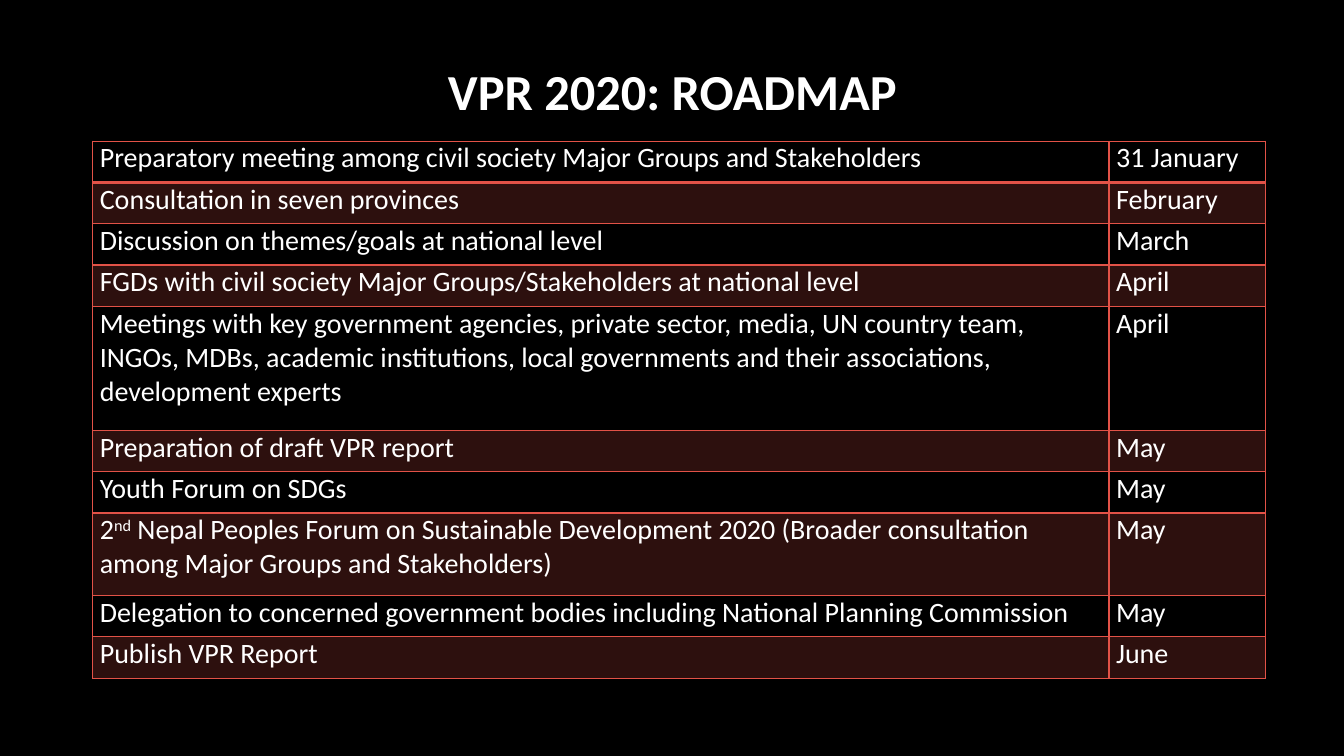
from lxml import etree
from pptx import Presentation
from pptx.dml.color import RGBColor
from pptx.enum.text import MSO_ANCHOR, PP_ALIGN
from pptx.oxml.ns import qn
from pptx.util import Inches, Pt

# Content: activity, date; a list marks an activity whose second part is superscript
TITLE = "VPR 2020: ROADMAP"
ROADMAP = [
    ("Preparatory meeting among civil society Major Groups and Stakeholders", "31 January"),
    ("Consultation in seven provinces", "February"),
    ("Discussion on themes/goals at national level", "March"),
    ("FGDs with civil society Major Groups/Stakeholders at national level", "April"),
    ("Meetings with key government agencies, private sector, media, UN country team, "
     "INGOs, MDBs, academic institutions, local governments and their associations, "
     "development experts", "April"),
    ("Preparation of draft VPR report", "May"),
    ("Youth Forum on SDGs", "May"),
    (["2", "nd", " Nepal Peoples Forum on Sustainable Development 2020 "
      "(Broader consultation among Major Groups and Stakeholders)"], "May"),
    ("Delegation to concerned government bodies including National Planning Commission", "May"),
    ("Publish VPR Report", "June"),
]
COL_WIDTHS = [10.08, 1.55]
LINE_HEIGHT = 0.41
ROW_LINES = [1, 1, 1, 1, 3, 1, 1, 2, 1, 1]

FONT = "Calibri"
BLACK = RGBColor(0x00, 0x00, 0x00)
WHITE = RGBColor(0xFF, 0xFF, 0xFF)
RED = RGBColor(0xE2, 0x52, 0x47)
BAND_ALPHA = "20000"


def set_font(p, size, bold=False):
    p.font.name = FONT
    p.font.size = Pt(size)
    p.font.bold = bold
    p.font.color.rgb = WHITE


def add_border(cell, side, width):
    ln = etree.SubElement(cell._tc.get_or_add_tcPr(), qn("a:ln" + side), w=str(Pt(width)))
    fill = etree.SubElement(ln, qn("a:solidFill"))
    etree.SubElement(fill, qn("a:srgbClr"), val=str(RED))


def fill_cell(cell, banded):
    if not banded:
        cell.fill.background()
        return
    cell.fill.solid()
    cell.fill.fore_color.rgb = RED
    color = cell._tc.tcPr.find(qn("a:solidFill")).find(qn("a:srgbClr"))
    etree.SubElement(color, qn("a:alpha"), val=BAND_ALPHA)


def write_cell(cell, content):
    cell.margin_left = cell.margin_right = Inches(0.07)
    cell.margin_top = cell.margin_bottom = 0
    p = cell.text_frame.paragraphs[0]
    p.space_after = Pt(6)
    set_font(p, 20)
    parts = [content] if isinstance(content, str) else content
    for i, part in enumerate(parts):
        r = p.add_run()
        r.text = part
        if i == 1:
            r._r.get_or_add_rPr().set("baseline", "30000")


prs = Presentation()
prs.slide_width, prs.slide_height = Inches(13.33), Inches(7.5)
s = prs.slides.add_slide(prs.slide_layouts[5])
s.background.fill.solid()
s.background.fill.fore_color.rgb = BLACK

# Title
title = s.shapes.title
title.left, title.top = Inches(0.92), Inches(0.4)
title.width, title.height = Inches(11.5), Inches(1)
tf = title.text_frame
tf.text = TITLE
tf.vertical_anchor = MSO_ANCHOR.MIDDLE
p = tf.paragraphs[0]
p.alignment = PP_ALIGN.CENTER
set_font(p, 36, bold=True)

# Roadmap table
table = s.shapes.add_table(
    len(ROADMAP), len(COL_WIDTHS), Inches(0.92), Inches(1.4),
    Inches(sum(COL_WIDTHS)), Inches(LINE_HEIGHT * sum(ROW_LINES))).table
table.first_row = table.horz_banding = False
for col, width in zip(table.columns, COL_WIDTHS):
    col.width = Inches(width)
for i, (row, lines, entry) in enumerate(zip(table.rows, ROW_LINES, ROADMAP)):
    row.height = Inches(LINE_HEIGHT * lines)
    for cell, content in zip(row.cells, entry):
        write_cell(cell, content)
        # A thicker rule runs below the first row
        for side, width in (("L", 1), ("R", 1), ("T", 2 if i == 1 else 1),
                            ("B", 2 if i == 0 else 1)):
            add_border(cell, side, width)
        fill_cell(cell, banded=i % 2 == 1)

prs.save("out.pptx")
